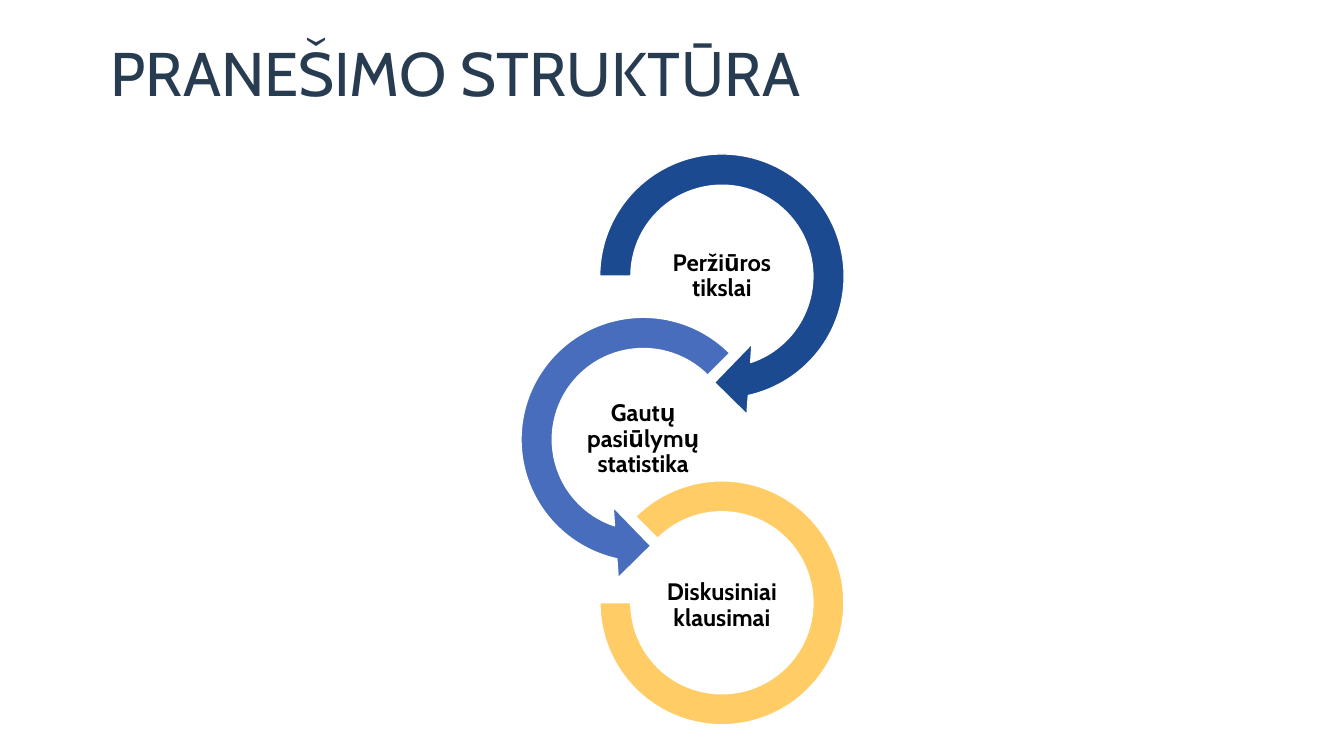
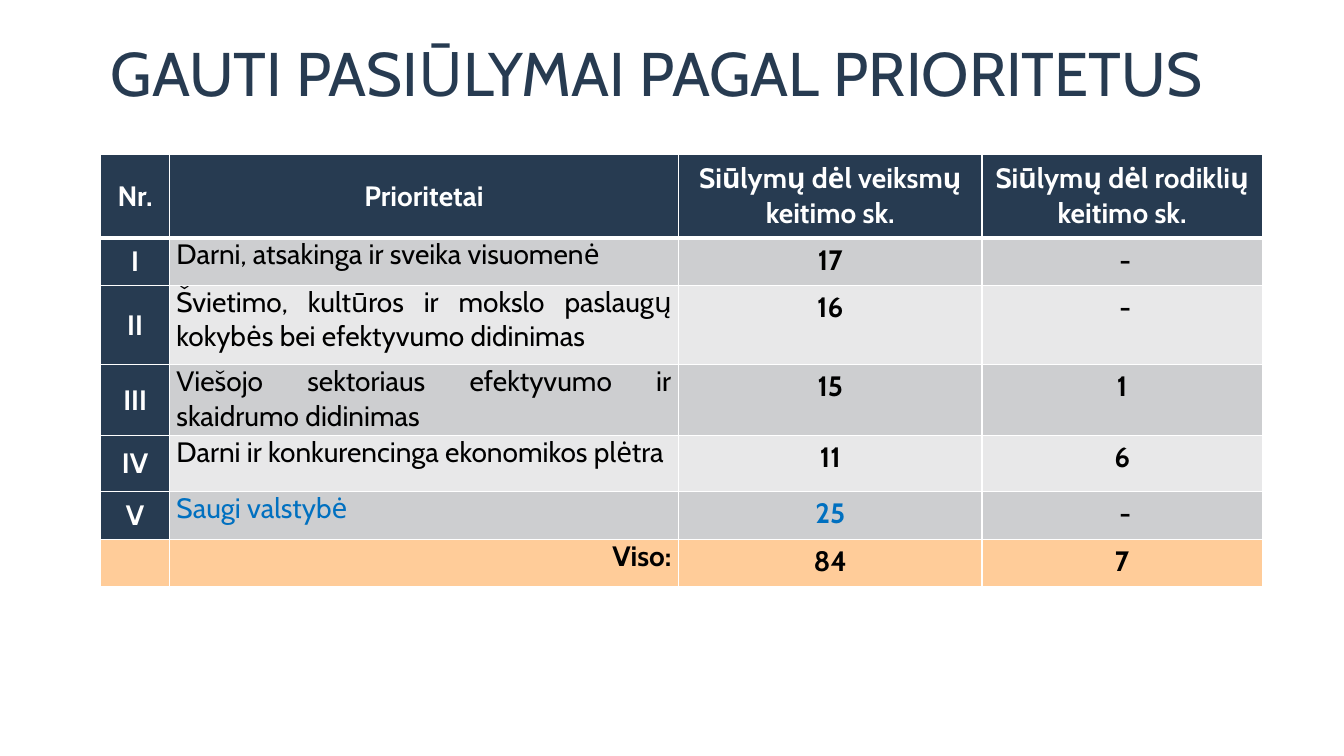
from lxml.etree import SubElement
from pptx import Presentation
from pptx.dml.color import RGBColor
from pptx.enum.shapes import MSO_SHAPE
from pptx.enum.text import MSO_ANCHOR, PP_ALIGN
from pptx.oxml.ns import qn
from pptx.util import Inches, Pt

COLOURS = {
    "navy": "273B51", "deep_blue": "1C4A90", "blue": "486DBC", "yellow": "FFCC66",
    "white": "FFFFFF", "black": "000000", "accent": "0070C0",
    "grey": "CDCED0", "light_grey": "E8E8E9", "orange": "FFCC99",
}
FONT = "Cabin"

STRUCTURE_TITLE = "PRANEŠIMO STRUKTŪRA"
# label, shape, adjustments, colour, centre x, size, label shift down
STEPS = [
    ("Peržiūros tikslai", MSO_SHAPE.CIRCULAR_ARROW,
     (0.11, 11.42, 45, 108, 0.125), "deep_blue", 7.16, 2.82, 0),
    ("Gautų pasiūlymų statistika", MSO_SHAPE.LEFT_CIRCULAR_ARROW,
     (0.11, 11.42, 63, 189, 0.125), "blue", 6.38, 2.82, 0),
    ("Diskusiniai klausimai", MSO_SHAPE.BLOCK_ARC,
     (135, 108, 0.127), "yellow", 7.16, 2.42, 0.03),
]
FIRST_CENTRE, STEP_PITCH = 2.74, 1.62
LABEL_WIDTH, LABEL_HEIGHT = 1.57, 0.78

PRIORITIES_TITLE = "GAUTI PASIŪLYMAI PAGAL PRIORITETUS"
PRIORITIES = [
    ("Nr.", "Prioritetai", "Siūlymų dėl veiksmų keitimo sk.",
     "Siūlymų dėl rodiklių\nkeitimo sk."),
    ("I", "Darni, atsakinga ir sveika visuomenė", "17", " -"),
    ("II", "Švietimo, kultūros ir mokslo paslaugų kokybės bei efektyvumo didinimas",
     "16", " -"),
    ("III", "Viešojo sektoriaus efektyvumo ir skaidrumo didinimas", "15", "1"),
    ("IV", "Darni ir konkurencinga ekonomikos plėtra", "11", "6"),
    ("V", "Saugi valstybė", "25", " -"),
    ("", "Viso:", "84", "7"),
]
COLUMN_WIDTHS = [0.68, 5.05, 3.01, 2.78]
ROW_HEIGHTS = [0.83, 0.47, 0.79, 0.7, 0.56, 0.47, 0.47]
TOTAL_ROW = len(PRIORITIES) - 1
HIGHLIGHTED = {(5, 1), (5, 2)}


def colour(name):
    return RGBColor.from_string(COLOURS[name])


def style_text(text_frame, size, colour_name, bold=False, align=PP_ALIGN.LEFT, spacing=1.0):
    for paragraph in text_frame.paragraphs:
        paragraph.alignment = align
        paragraph.line_spacing = spacing
        for name, value in {"name": FONT, "size": Pt(size), "bold": bold}.items():
            setattr(paragraph.font, name, value)
        paragraph.font.color.rgb = colour(colour_name)


def add_text(slide, text, left, top, width, height, margins=None, **style):
    box = slide.shapes.add_textbox(*map(Inches, (left, top, width, height)))
    frame = box.text_frame
    frame.word_wrap = True
    frame.vertical_anchor = MSO_ANCHOR.MIDDLE
    if margins is not None:
        for side in ("left", "right", "top", "bottom"):
            setattr(frame, f"margin_{side}", Inches(margins))
    frame.text = text
    style_text(frame, **style)


def add_titled_slide(presentation, title):
    slide = presentation.slides.add_slide(presentation.slide_layouts[6])
    add_text(slide, title, 1, 0.31, 11.33, 0.89, size=44, colour_name="navy", spacing=0.9)
    return slide


def add_step(slide, index, label, preset, adjustments, fill, centre_x, size, label_shift):
    centre_y = FIRST_CENTRE + index * STEP_PITCH
    ring = slide.shapes.add_shape(preset, Inches(centre_x - size / 2),
                                  Inches(centre_y - size / 2), Inches(size), Inches(size))
    ring.shadow.inherit = False
    for position, value in enumerate(adjustments):
        ring.adjustments[position] = value
    ring.fill.solid()
    ring.fill.fore_color.rgb = colour(fill)
    ring.line.color.rgb = colour("white")
    ring.line.width = Pt(1)
    add_text(slide, label, centre_x - LABEL_WIDTH / 2,
             centre_y + label_shift - LABEL_HEIGHT / 2, LABEL_WIDTH, LABEL_HEIGHT,
             margins=0.01, size=17, colour_name="black", bold=True,
             align=PP_ALIGN.CENTER, spacing=0.9)


def set_borders(cell, widths):
    """Draw white borders; widths maps L, R, T, B (in that order) to points."""
    properties = cell._tc.get_or_add_tcPr()
    for side, width in widths.items():
        line = SubElement(properties, qn(f"a:ln{side}"), w=str(Pt(width)))
        fill = SubElement(line, qn("a:solidFill"))
        SubElement(fill, qn("a:srgbClr"), val=COLOURS["white"])


def cell_fill(row, column):
    if row == TOTAL_ROW:
        return "orange"
    if row == 0 or column == 0:
        return "navy"
    return "grey" if row % 2 else "light_grey"


def cell_text_style(row, column):
    heading = row == 0 or column == 0
    style = {"size": 20, "bold": True, "align": PP_ALIGN.CENTER,
             "colour_name": "white" if heading else "black"}
    if (row, column) in HIGHLIGHTED:
        style["colour_name"] = "accent"
    if not heading and column == 1:
        total = row == TOTAL_ROW
        style.update(bold=total, align=PP_ALIGN.RIGHT if total else PP_ALIGN.JUSTIFY)
    elif not heading:
        style["spacing"] = 1.15
    return style


def add_priorities_table(slide):
    frame = slide.shapes.add_table(
        len(PRIORITIES), len(COLUMN_WIDTHS), Inches(1), Inches(1.53),
        Inches(sum(COLUMN_WIDTHS)), Inches(sum(ROW_HEIGHTS)))
    table = frame.table
    table.first_row = table.horz_banding = False
    for column, width in zip(table.columns, COLUMN_WIDTHS):
        column.width = Inches(width)
    for row, height in zip(table.rows, ROW_HEIGHTS):
        row.height = Inches(height)
    for row, texts in enumerate(PRIORITIES):
        for column, text in enumerate(texts):
            cell = table.cell(row, column)
            cell.text = text
            cell.margin_left = cell.margin_right = Inches(0.07)
            cell.margin_top = cell.margin_bottom = 0
            heading = row == 0 or column == 0
            cell.vertical_anchor = MSO_ANCHOR.MIDDLE if heading else MSO_ANCHOR.TOP
            style_text(cell.text_frame, **cell_text_style(row, column))
            set_borders(cell, {"L": 1, "R": 1, "T": 3 if row == 1 else 1,
                               "B": 3 if row == 0 else 1})
            cell.fill.solid()
            cell.fill.fore_color.rgb = colour(cell_fill(row, column))


def main():
    presentation = Presentation()
    presentation.slide_width = Inches(13.33)
    presentation.slide_height = Inches(7.5)
    structure = add_titled_slide(presentation, STRUCTURE_TITLE)
    for index, step in enumerate(STEPS):
        add_step(structure, index, *step)
    add_priorities_table(add_titled_slide(presentation, PRIORITIES_TITLE))
    presentation.save("out.pptx")


if __name__ == "__main__":
    main()
